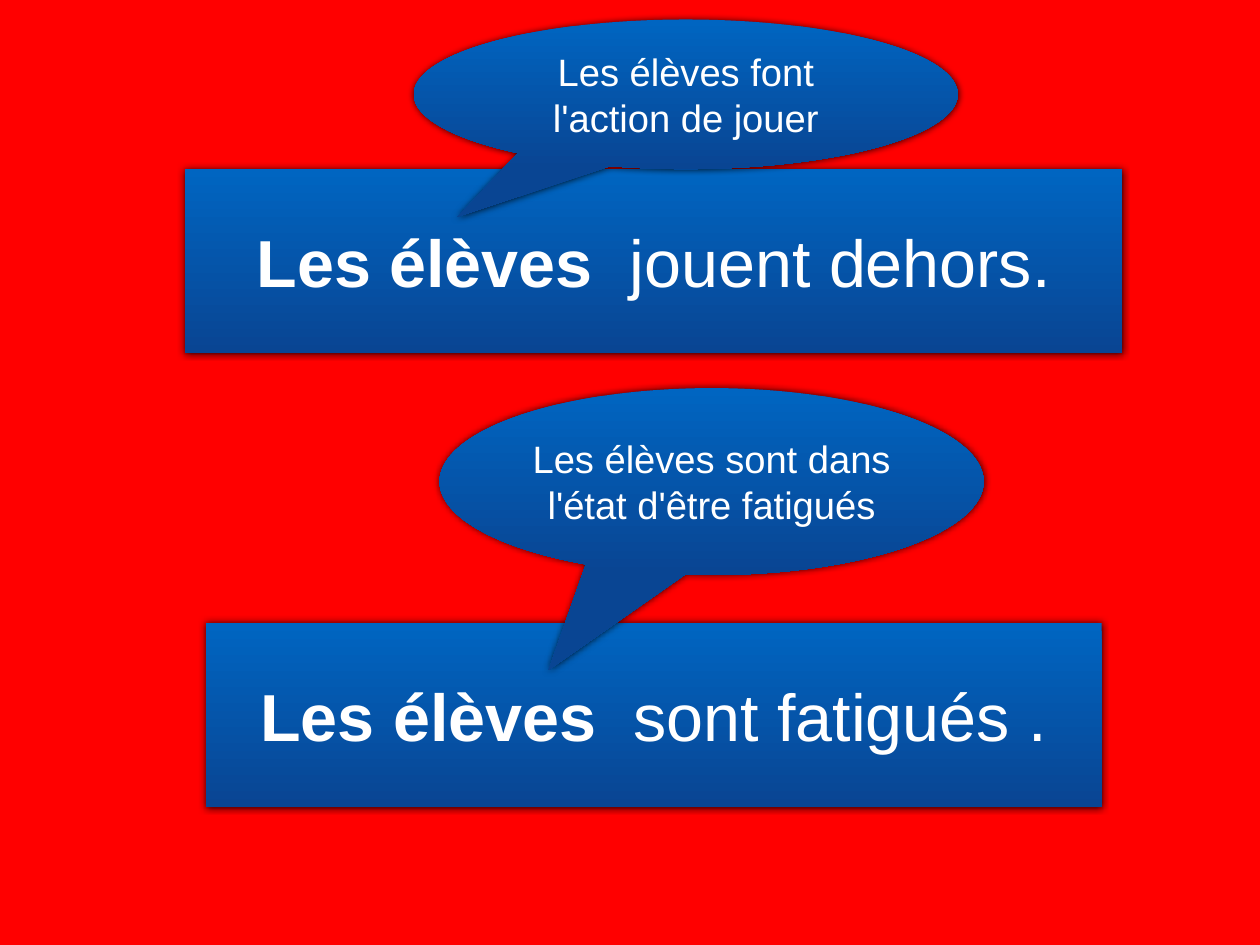
"""Build a slide of two French sentences, each explained by a speech bubble."""
import lxml.etree
import pptx
import pptx.dml.color
import pptx.enum.shapes
import pptx.enum.text
import pptx.oxml.ns
import pptx.util

Cm = pptx.util.Cm
Kind = pptx.enum.shapes.MSO_SHAPE

COLOURS = {
    "background": "FF0000",
    "top": "0065C1",
    "bottom": "094593",
    "text": "FFFFFF",
    "shadow": "000000",
}
FONT = "Arial"
SENTENCE_CENTRE, SENTENCE_HEIGHT = 18.74, 5.28
BUBBLE_WIDTH = 15.6

SENTENCES = [
    {"subject": "Les élèves ", "predicate": " jouent dehors.", "top": 4.85, "width": 26.87},
    {"subject": "Les élèves ", "predicate": " sont fatigués .", "top": 17.86, "width": 25.68},
]
BUBBLES = [
    {"remark": "Les élèves font l'action de jouer",
     "left": 11.86, "top": 0.56, "height": 4.29, "tip": (-0.42, 0.82)},
    {"remark": "Les élèves sont dans l'état d'être fatigués",
     "left": 12.6, "top": 11.13, "height": 5.36, "tip": (-0.3, 1.01)},
]


def rgb(name):
    """Return the named colour."""
    return pptx.dml.color.RGBColor.from_string(COLOURS[name])


def add_glow(panel):
    """Put a soft dark shadow right behind the panel."""
    panel.shadow.inherit = False
    qn = pptx.oxml.ns.qn
    effects = panel._element.spPr.find(qn("a:effectLst"))
    outer = lxml.etree.SubElement(effects, qn("a:outerShdw"), blurRad=str(pptx.util.Pt(6)),
                                  dist="0", dir="18900000", rotWithShape="0")
    tint = lxml.etree.SubElement(outer, qn("a:srgbClr"), val=COLOURS["shadow"])
    lxml.etree.SubElement(tint, qn("a:alpha"), val="80000")


def add_panel(slide, kind, left, top, width, height):
    """Add a borderless shape shaded from top to bottom."""
    panel = slide.shapes.add_shape(kind, Cm(left), Cm(top), Cm(width), Cm(height))
    panel.fill.gradient()
    panel.fill.gradient_angle = 270
    for stop, name in zip(panel.fill.gradient_stops, ("top", "bottom")):
        stop.color.rgb = rgb(name)
    panel.line.fill.background()
    add_glow(panel)
    frame = panel.text_frame
    frame.word_wrap = True
    frame.vertical_anchor = pptx.enum.text.MSO_ANCHOR.MIDDLE
    frame.margin_left = frame.margin_right = Cm(0.15)
    frame.margin_top = frame.margin_bottom = Cm(0.15)
    frame.paragraphs[0].alignment = pptx.enum.text.PP_ALIGN.CENTER
    return panel


def write(panel, text, size, bold=False, colour="text"):
    """Append formatted text to the panel's paragraph."""
    run = panel.text_frame.paragraphs[0].add_run()
    run.text = text
    run.font.name = FONT
    run.font.size = pptx.util.Pt(size)
    run.font.bold = bold
    run.font.color.rgb = rgb(colour)


def main():
    """Lay out the sentences, then the bubbles over them."""
    deck = pptx.Presentation()
    deck.slide_width, deck.slide_height = Cm(36.12), Cm(27.1)
    slide = deck.slides.add_slide(deck.slide_layouts[6])
    slide.background.fill.solid()
    slide.background.fill.fore_color.rgb = rgb("background")

    for sentence in SENTENCES:
        left = SENTENCE_CENTRE - sentence["width"] / 2
        banner = add_panel(slide, Kind.RECTANGLE, left, sentence["top"],
                           sentence["width"], SENTENCE_HEIGHT)
        write(banner, sentence["subject"], size=54, bold=True)
        write(banner, sentence["predicate"], size=54)

    for bubble in BUBBLES:
        balloon = add_panel(slide, Kind.OVAL_CALLOUT, bubble["left"], bubble["top"],
                            BUBBLE_WIDTH, bubble["height"])
        balloon.adjustments[0], balloon.adjustments[1] = bubble["tip"]
        write(balloon, bubble["remark"], size=31)

    deck.save("out.pptx")


if __name__ == "__main__":
    main()
